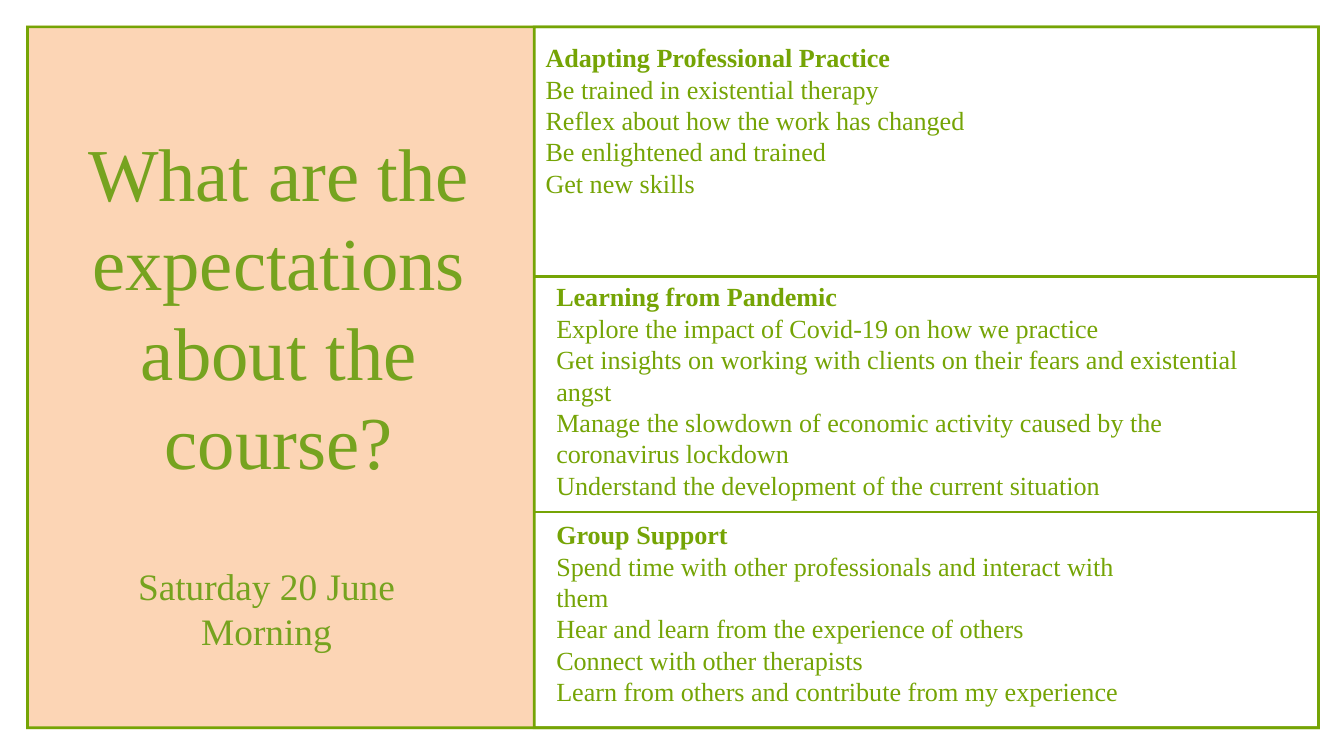
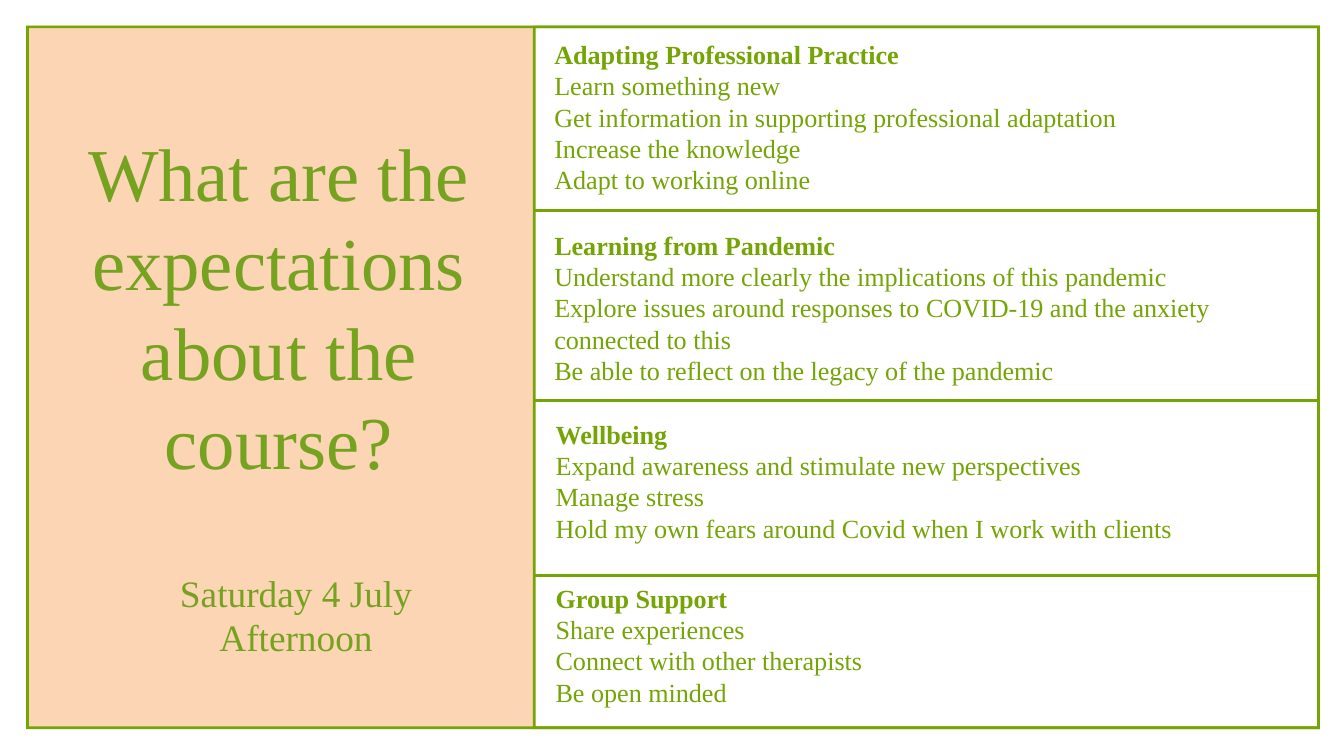
from pptx import Presentation
from pptx.dml.color import RGBColor
from pptx.enum.shapes import MSO_CONNECTOR, MSO_SHAPE
from pptx.enum.text import MSO_ANCHOR, MSO_AUTO_SIZE, PP_ALIGN
from pptx.oxml.ns import qn
from pptx.util import Emu, Pt
from lxml import etree

PX = 9144  # one px is a hundredth of an inch
TITLE_ONLY = 5
RECTANGLE = MSO_SHAPE.RECTANGLE
STRAIGHT = MSO_CONNECTOR.STRAIGHT
LEFT, CENTER = PP_ALIGN.LEFT, PP_ALIGN.CENTER
TOP = MSO_ANCHOR.TOP
GROW = MSO_AUTO_SIZE.SHAPE_TO_FIT_TEXT

FONT = "Times New Roman"
PEACH = RGBColor(0xFC, 0xD5, 0xB5)
GREEN = RGBColor(0x75, 0xA4, 0x05)
TITLE_GREEN = RGBColor(0x76, 0xA3, 0x1F)

# Edges of the frame and of the column of expectations
FRAME_LEFT, FRAME_TOP, FRAME_RIGHT, FRAME_BOTTOM = 39, 38, 1964, 1085
COLUMN_LEFT = 793
BORDER = 4

TITLE = "What are the expectations about the course?"


def px(*lengths):
    return [Emu(length * PX) for length in lengths]


def write_text(shape, lines, size, color, align=LEFT, inset=None,
               line_spacing=None, bold_first=False):
    frame = shape.text_frame
    frame.word_wrap = True
    frame.auto_size = GROW
    frame.vertical_anchor = TOP
    if inset is not None:
        frame.margin_left = frame.margin_right = Emu(inset * PX)
        frame.margin_top = frame.margin_bottom = Emu(inset * PX)
    frame.text = "\n".join(lines)
    for index, paragraph in enumerate(frame.paragraphs):
        paragraph.alignment = align
        if line_spacing:
            paragraph.line_spacing = Pt(line_spacing)
        font = paragraph.runs[0].font
        font.name = FONT
        font.size = Pt(size)
        font.bold = bold_first and index == 0
        font.color.rgb = color


def add_text(slide, box, lines, **text_format):
    write_text(slide.shapes.add_textbox(*px(*box)), lines, **text_format)


def add_panel(slide):
    panel = slide.shapes.add_shape(RECTANGLE, *px(
        FRAME_LEFT, FRAME_TOP, COLUMN_LEFT - FRAME_LEFT, FRAME_BOTTOM - FRAME_TOP))
    panel.shadow.inherit = False
    panel.fill.solid()
    panel.fill.fore_color.rgb = PEACH
    panel.line.fill.background()


def add_border(slide, left):
    """Hollow border from left to the right edge of the frame."""
    top, right, bottom = FRAME_TOP, FRAME_RIGHT, FRAME_BOTTOM
    builder = slide.shapes.build_freeform(left, top, scale=PX)
    builder.add_line_segments([(left, bottom), (right, bottom), (right, top)])
    left, top = left + BORDER, top + BORDER
    right, bottom = right - BORDER, bottom - BORDER
    builder.move_to(left, top)
    builder.add_line_segments([(right, top), (right, bottom), (left, bottom)])
    border = builder.convert_to_shape()
    border.shadow.inherit = False
    border.fill.solid()
    border.fill.fore_color.rgb = GREEN
    border.line.fill.background()


def add_divider(slide, y):
    divider = slide.shapes.add_connector(
        STRAIGHT, *px(COLUMN_LEFT + 1, y, FRAME_RIGHT - 1, y))
    divider.line.color.rgb = GREEN
    divider.line.width = Pt(3)
    etree.SubElement(divider.element.spPr, qn("a:effectLst"))


def place_title(slide):
    title = slide.shapes.title
    title.left, title.top, title.width, title.height = px(82, 188, 666, 539)
    write_text(title, [TITLE], size=80, color=TITLE_GREEN, align=CENTER,
               inset=0, line_spacing=96)
    # Bring the title in front of the panel
    title.element.getparent().append(title.element)


def add_expectations_slide(presentation, session, session_box, topics, dividers):
    slide = presentation.slides.add_slide(presentation.slide_layouts[TITLE_ONLY])
    add_panel(slide)
    for left in (FRAME_LEFT, COLUMN_LEFT):
        add_border(slide, left)
    place_title(slide)
    for box, lines in topics:
        add_text(slide, box, lines, size=28, color=GREEN, bold_first=True)
    for y in dividers:
        add_divider(slide, y)
    add_text(slide, session_box, session, size=40, color=TITLE_GREEN, align=CENTER)


# Each topic: box (left, top, width, height) and its lines, heading first
JUNE_TOPICS = [
    ((802, 57, 1169, 246), [
        "Adapting Professional Practice",
        "Be trained in existential therapy",
        "Reflex about how the work has changed",
        "Be enlightened and trained",
        "Get new skills"]),
    ((818, 413, 1100, 323), [
        "Learning from Pandemic",
        "Explore the impact of Covid-19 on how we practice",
        "Get insights on working with clients on their fears and existential angst",
        "Manage the slowdown of economic activity caused by the coronavirus lockdown",
        "Understand the development of the current situation"]),
    ((818, 767, 927, 293), [
        "Group Support",
        "Spend time with other professionals and interact with them",
        "Hear and learn from the experience of others",
        "Connect with other therapists",
        "Learn from others and contribute from my experience"]),
]

JULY_TOPICS = [
    ((815, 52, 1169, 495), [
        "Adapting Professional Practice",
        "Learn something new",
        "Get information in supporting professional adaptation",
        "Increase the knowledge",
        "Adapt to working online"]),
    ((815, 336, 1100, 246), [
        "Learning from Pandemic",
        "Understand more clearly the implications of this pandemic",
        "Explore issues around responses to COVID-19 and the anxiety connected to this",
        "Be able to reflect on the legacy of the pandemic"]),
    ((817, 617, 1050, 199), [
        "Wellbeing",
        "Expand awareness and stimulate new perspectives",
        "Manage stress",
        "Hold my own fears around Covid when I work with clients"]),
    ((817, 861, 927, 229), [
        "Group Support",
        "Share experiences",
        "Connect with other therapists",
        "Be open minded"]),
]


def main():
    presentation = Presentation()
    presentation.slide_width, presentation.slide_height = px(2000, 1125)
    add_expectations_slide(presentation, ["Saturday 20 June Morning"],
                           (167, 833, 459, 145), JUNE_TOPICS, (412, 762))
    add_expectations_slide(presentation, ["Saturday 4 July", "Afternoon"],
                           (211, 843, 459, 145), JULY_TOPICS, (313, 596, 856))
    presentation.save("out.pptx")


if __name__ == "__main__":
    main()
